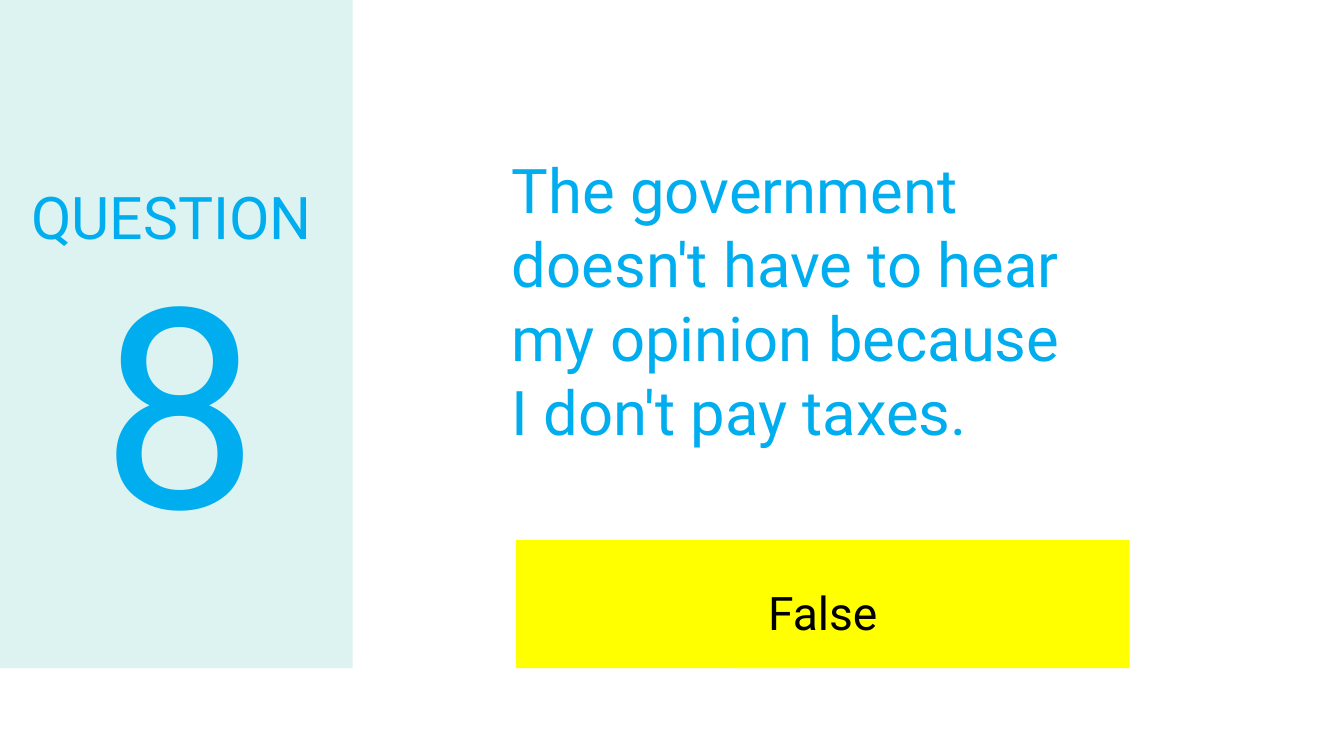
from pptx import Presentation
from pptx.dml.color import RGBColor
from pptx.enum.shapes import MSO_SHAPE
from pptx.enum.text import MSO_ANCHOR, MSO_AUTO_SIZE, PP_ALIGN
from pptx.util import Cm, Pt

COLORS = {"blue": "00AEEF", "mint": "DDF3F1", "yellow": "FFFF00", "black": "000000"}
FONT = "Roboto"


def place(shape, left, top, width, height):
    shape.left, shape.top = Cm(left), Cm(top)
    shape.width, shape.height = Cm(width), Cm(height)


def write(shape, text, size, color="blue", align=PP_ALIGN.LEFT,
          anchor=MSO_ANCHOR.TOP, spacing=1.0, inset=0.25):
    frame = shape.text_frame
    frame.word_wrap = True
    frame.auto_size = MSO_AUTO_SIZE.NONE
    frame.vertical_anchor = anchor
    frame.margin_left = frame.margin_right = Cm(inset)
    frame.margin_top = frame.margin_bottom = Cm(inset)
    para = frame.paragraphs[0]
    para.text = text
    para.alignment = align
    para.line_spacing = spacing
    for span in para.runs:
        span.font.name = FONT
        span.font.size = Pt(size)
        span.font.color.rgb = RGBColor.from_string(COLORS[color])


def add_text(page, box, text, **style):
    shape = page.shapes.add_textbox(*map(Cm, box))
    write(shape, text, **style)


def add_block(page, box, color):
    shape = page.shapes.add_shape(MSO_SHAPE.RECTANGLE, *map(Cm, box))
    shape.shadow.inherit = False
    shape.fill.solid()
    shape.fill.fore_color.rgb = RGBColor.from_string(COLORS[color])
    shape.line.fill.background()


def add_statement(page, box, text):
    title = page.shapes.title
    place(title, *box)
    write(title, text, size=44)


def add_number_panel(page, box, label, number):
    left, top, width, height = box
    add_block(page, box, "mint")
    style = {"anchor": MSO_ANCHOR.MIDDLE, "spacing": 0.9, "inset": 0.13}
    text_left = left + 0.66
    add_text(page, (text_left, top + 4.27, width - 0.41, 2.57), label, size=42, **style)
    add_text(page, (text_left, top + 6.58, width - 1.14, 7.92), number,
             size=200, align=PP_ALIGN.CENTER, **style)


def add_answer(page, box, text):
    left, top, width, height = box
    right_width = 9.98
    add_block(page, (left, top, 7.16, height), "yellow")
    add_block(page, (left + width - right_width, top, right_width, height), "yellow")
    add_text(page, (left, top + 0.66, width, 1.93), text, size=33, color="black",
             align=PP_ALIGN.CENTER, spacing=1.15)


def main():
    deck = Presentation()
    deck.slide_width, deck.slide_height = Cm(33.87), Cm(19.05)
    page = deck.slides.add_slide(deck.slide_layouts[5])
    add_statement(page, (12.65, 3.58, 16.56, 8.03),
                  "The government doesn't have to hear my opinion because \vI don't pay taxes.")
    add_number_panel(page, (0, 0, 8.89, 16.84), "QUESTION", "8")
    add_answer(page, (13, 13.61, 15.47, 3.23), "False")
    deck.save("out.pptx")


if __name__ == "__main__":
    main()
